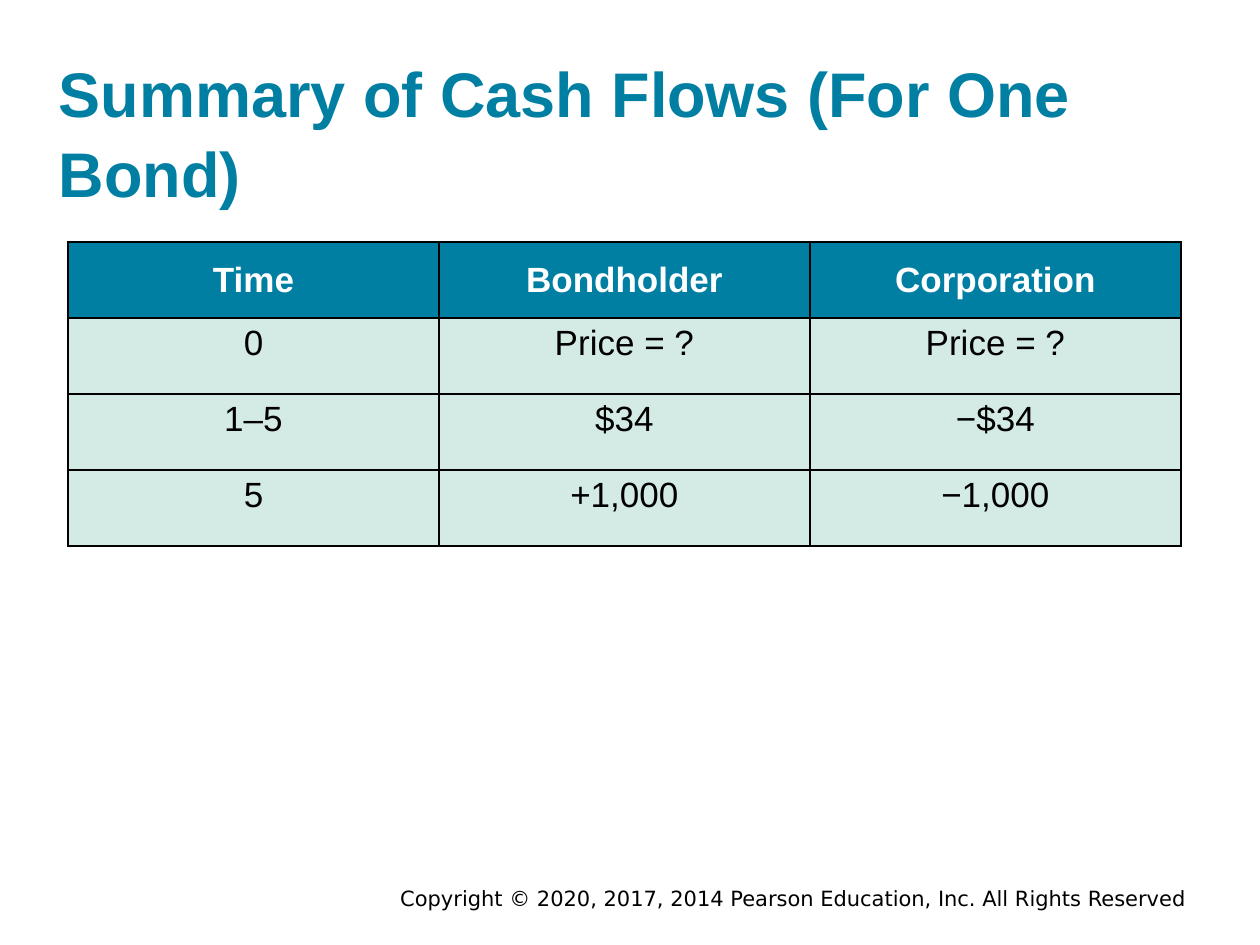
from lxml import etree
from pptx import Presentation
from pptx import util as u
from pptx.dml.color import RGBColor
from pptx.enum import text
from pptx.oxml import ns

TITLE = "Summary of Cash Flows (For One Bond)"
COPYRIGHT = "Copyright © 2020, 2017, 2014 Pearson Education, Inc. All Rights Reserved"
CASH_FLOWS = [
    ("Time", "Bondholder", "Corporation"),
    ("0", "Price = ?", "Price = ?"),
    ("1–5", "$34", "−$34"),
    ("5", "+1,000", "−1,000"),
]
TEAL, MINT, BLACK, WHITE = "007FA3", "D4EAE4", "000000", "FFFFFF"
TABLE_LEFT, TABLE_TOP = 68, 242
COLUMN_WIDTH, ROW_HEIGHT = 371, 76
EMU_PER_PX = 914400 / 126


def px(value):
    return u.Emu(round(value * EMU_PER_PX))


def color(value):
    return RGBColor.from_string(value)


def write(frame, content, size, font, ink, align, bold=False):
    paragraph = frame.paragraphs[0]
    paragraph.alignment = align
    run = paragraph.add_run()
    run.text = content
    run.font.size = u.Pt(size)
    run.font.name = font
    run.font.bold = bold
    run.font.color.rgb = color(ink)
    return paragraph


def add_text_frame(slide, left, top, width, height):
    frame = slide.shapes.add_textbox(px(left), px(top), px(width), px(height)).text_frame
    frame.word_wrap = True
    return frame


def add_borders(cell):
    properties = cell._tc.get_or_add_tcPr()
    for index, side in enumerate(("lnL", "lnR", "lnT", "lnB")):
        line = etree.Element(ns.qn(f"a:{side}"), w=str(u.Pt(1)))
        fill = etree.SubElement(line, ns.qn("a:solidFill"))
        etree.SubElement(fill, ns.qn("a:srgbClr"), val=BLACK)
        properties.insert(index, line)


def add_title(slide):
    frame = add_text_frame(slide, 59, 59, 1128, 151)
    frame.margin_left = frame.margin_right = frame.margin_top = frame.margin_bottom = 0
    frame.vertical_anchor = text.MSO_ANCHOR.BOTTOM
    paragraph = write(frame, TITLE, 36, "Arial", TEAL, text.PP_ALIGN.LEFT, bold=True)
    paragraph.line_spacing = 1.05


def add_cash_flow_table(slide):
    rows, columns = len(CASH_FLOWS), len(CASH_FLOWS[0])
    table = slide.shapes.add_table(
        rows, columns, px(TABLE_LEFT), px(TABLE_TOP),
        px(columns * COLUMN_WIDTH), px(rows * ROW_HEIGHT),
    ).table
    for column in table.columns:
        column.width = px(COLUMN_WIDTH)
    for row_index, values in enumerate(CASH_FLOWS):
        table.rows[row_index].height = px(ROW_HEIGHT)
        header = row_index == 0
        for column_index, value in enumerate(values):
            cell = table.cell(row_index, column_index)
            cell.fill.solid()
            cell.fill.fore_color.rgb = color(TEAL if header else MINT)
            cell.vertical_anchor = text.MSO_ANCHOR.MIDDLE if header else text.MSO_ANCHOR.TOP
            write(cell.text_frame, value, 20, "Arial", WHITE if header else BLACK,
                  text.PP_ALIGN.CENTER, bold=header)
            add_borders(cell)


def main():
    presentation = Presentation()
    presentation.slide_width, presentation.slide_height = px(1260), px(945)
    slide = presentation.slides.add_slide(presentation.slide_layouts[6])
    copyright_frame = add_text_frame(slide, 213, 879, 986, 38)
    write(copyright_frame, COPYRIGHT, 12, "DejaVu Sans", BLACK, text.PP_ALIGN.RIGHT)
    add_title(slide)
    add_cash_flow_table(slide)
    presentation.save("out.pptx")


if __name__ == "__main__":
    main()
